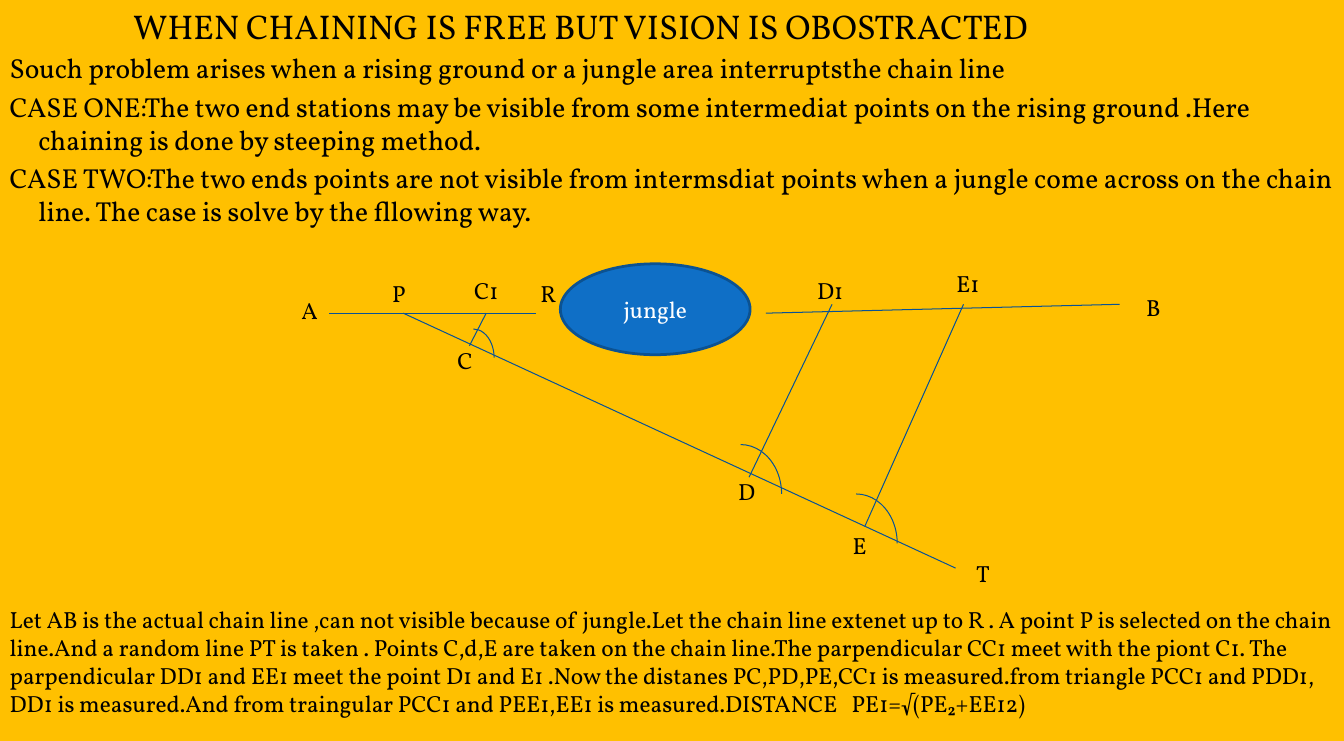
from lxml import etree
from pptx import Presentation
from pptx.dml.color import RGBColor
from pptx.enum.shapes import MSO_CONNECTOR, MSO_SHAPE
from pptx.enum.text import MSO_ANCHOR, PP_ALIGN
from pptx.oxml.ns import qn
from pptx.util import Pt

PX = 9144
GOLD = RGBColor(0xFF, 0xC0, 0x00)
BLUE = RGBColor(0x0F, 0x6F, 0xC6)
OUTLINE = RGBColor(0x0B, 0x52, 0x92)
LINE = RGBColor(0x09, 0x52, 0x95)
BLACK = RGBColor(0, 0, 0)
WHITE = RGBColor(0xFF, 0xFF, 0xFF)
FONT = "Vollkorn"

TITLE = "WHEN CHAINING IS FREE BUT VISION IS OBOSTRACTED"
CASES = [
    "Souch problem arises when a rising ground or a jungle area interruptsthe chain line",
    "CASE ONE:The two end stations may be visible from some intermediat points on the "
    "rising ground .Here chaining is done by steeping method.",
    "CASE TWO:The two ends points are not visible from intermsdiat points when a jungle "
    "come across on the chain line. The case is solve by the fllowing way.",
]
METHOD = (
    "Let AB is the actual chain line ,can not visible because of jungle.Let the chain line "
    "extenet up to R . A point P is selected on the chain line.And a random line PT is taken . "
    "Points C,d,E are taken on the chain line.The parpendicular CC1 meet with the piont C1. "
    "The parpendicular DD1 and EE1 meet the point D1 and E1 .Now the distanes PC,PD,PE,CC1 is "
    "measured.from triangle PCC1 and PDD1, DD1 is measured.And from traingular PCC1 and "
    "PEE1,EE1 is measured.DISTANCE\tPE1=√(PE₂+EE12)"
)
SIGHT_LINES = [
    (38, 50, 247, 50),
    (480, 50, 838, 41),
    (113, 50, 672, 308),
    (463, 216, 547, 41),
    (580, 266, 680, 41),
    (180, 83, 197, 50),
]
POINTS = [
    ("T", 683, 294), ("R", 242, 11), ("E", 558, 266), ("C1", 175, 8),
    ("E1", 663, 0), ("P", 92, 11), ("D1", 522, 8), ("D", 442, 211),
    ("C", 158, 78), ("A", 0, 28), ("B", 855, 25),
]
ANGLES = [(530, 233, 83, 100), (163, 66, 42, 58), (413, 183, 83, 100)]


def emu(*lengths):
    return [v * PX for v in lengths]


def add_run(p, text, size, color=BLACK):
    r = p.add_run()
    r.text = text
    r.font.name = FONT
    r.font.size = Pt(size)
    r.font.color.rgb = color


def add_text(s, box, text, size=17):
    tf = s.shapes.add_textbox(*emu(*box)).text_frame
    tf.word_wrap = True
    add_run(tf.paragraphs[0], text, size)
    return tf


def add_preset(s, kind, box, fill=None, line=None, width=0.75):
    sp = s.shapes.add_shape(kind, *emu(*box))
    sp.shadow.inherit = False
    for part, color in ((sp.fill, fill), (sp.line.fill, line)):
        if color is None:
            part.background()
        else:
            part.solid()
            part.fore_color.rgb = color
    if line is not None:
        sp.line.width = Pt(width)
    return sp


def add_line(s, x1, y1, x2, y2):
    c = s.shapes.add_connector(MSO_CONNECTOR.STRAIGHT, *emu(x1, y1, x2, y2))
    c.line.color.rgb = LINE
    c.line.width = Pt(0.75)
    etree.SubElement(c._element.spPr, qn("a:effectLst"))


def add_cases(s, box):
    tf = add_preset(s, MSO_SHAPE.RECTANGLE, box, GOLD).text_frame
    tf.word_wrap = True
    tf.vertical_anchor = MSO_ANCHOR.TOP
    rows = [(TITLE, 25, 125, 0)] + [(text, 20, 29, -29) for text in CASES]
    for i, (text, size, margin, indent) in enumerate(rows):
        p = tf.add_paragraph() if i else tf.paragraphs[0]
        p.alignment = PP_ALIGN.LEFT
        p.space_before = Pt(size / 5)
        pPr = p._p.get_or_add_pPr()
        pPr.set("marL", str(margin * PX))
        pPr.set("indent", str(indent * PX))
        add_run(p, text, size)


def add_diagram(s, x, y):
    jungle = add_preset(s, MSO_SHAPE.OVAL, (x + 272, y, 192, 92), BLUE, OUTLINE, 2)
    tf = jungle.text_frame
    tf.vertical_anchor = MSO_ANCHOR.MIDDLE
    p = tf.paragraphs[0]
    p.alignment = PP_ALIGN.CENTER
    add_run(p, "jungle", 17, WHITE)
    for x1, y1, x2, y2 in SIGHT_LINES:
        add_line(s, x + x1, y + y1, x + x2, y + y2)
    for name, dx, dy in POINTS:
        add_text(s, (x + dx, y + dy, 55, 39), name)
    for dx, dy, w, h in ANGLES:
        add_preset(s, MSO_SHAPE.ARC, (x + dx, y + dy, w, h), line=LINE)


def add_method(s, box):
    tf = add_text(s, box, METHOD)
    pPr = tf.paragraphs[0]._p.get_or_add_pPr()
    tabs = etree.SubElement(pPr, qn("a:tabLst"))
    etree.SubElement(tabs, qn("a:tab"), pos=str(852 * PX), algn="l")


def main():
    prs = Presentation()
    prs.slide_width, prs.slide_height = emu(1360, 750)
    s = prs.slides.add_slide(prs.slide_layouts[6])
    add_cases(s, (0, 0, 1360, 750))
    add_diagram(s, 295, 267)
    add_method(s, (0, 608, 1360, 125))
    prs.save("out.pptx")


if __name__ == "__main__":
    main()
